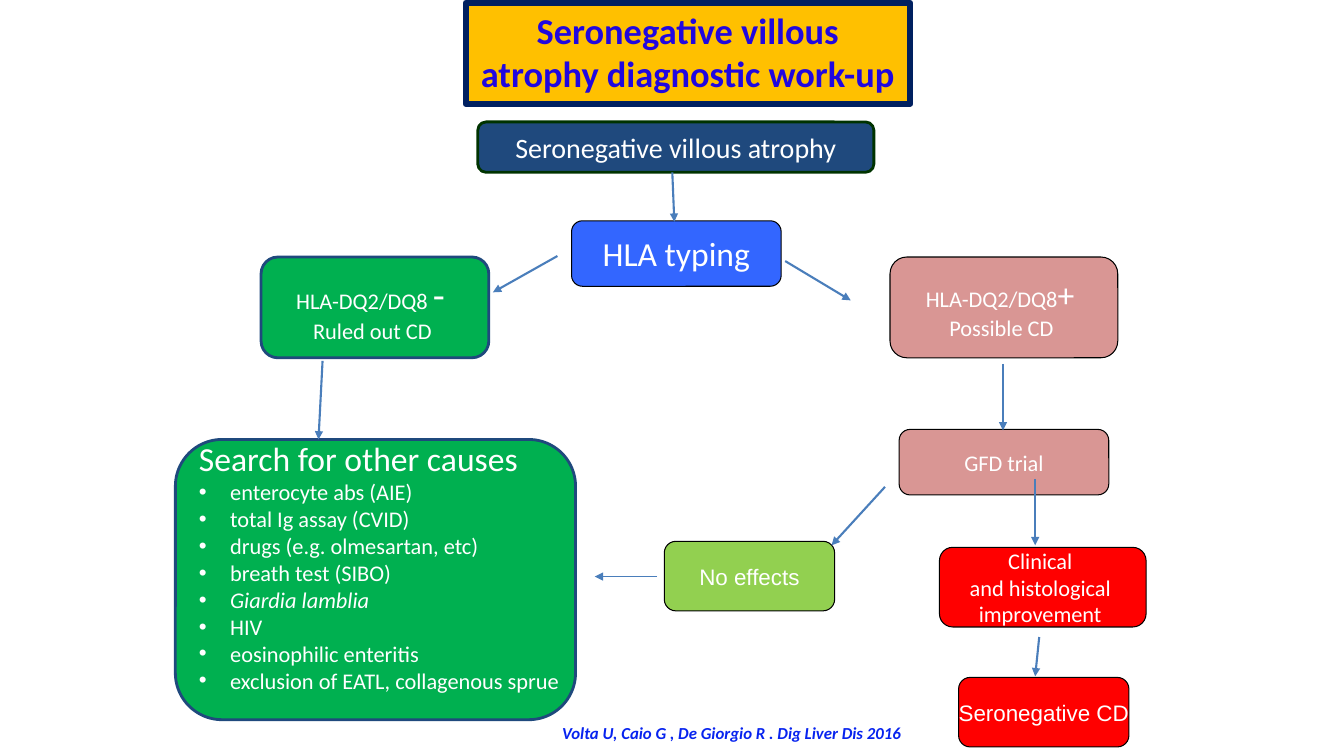
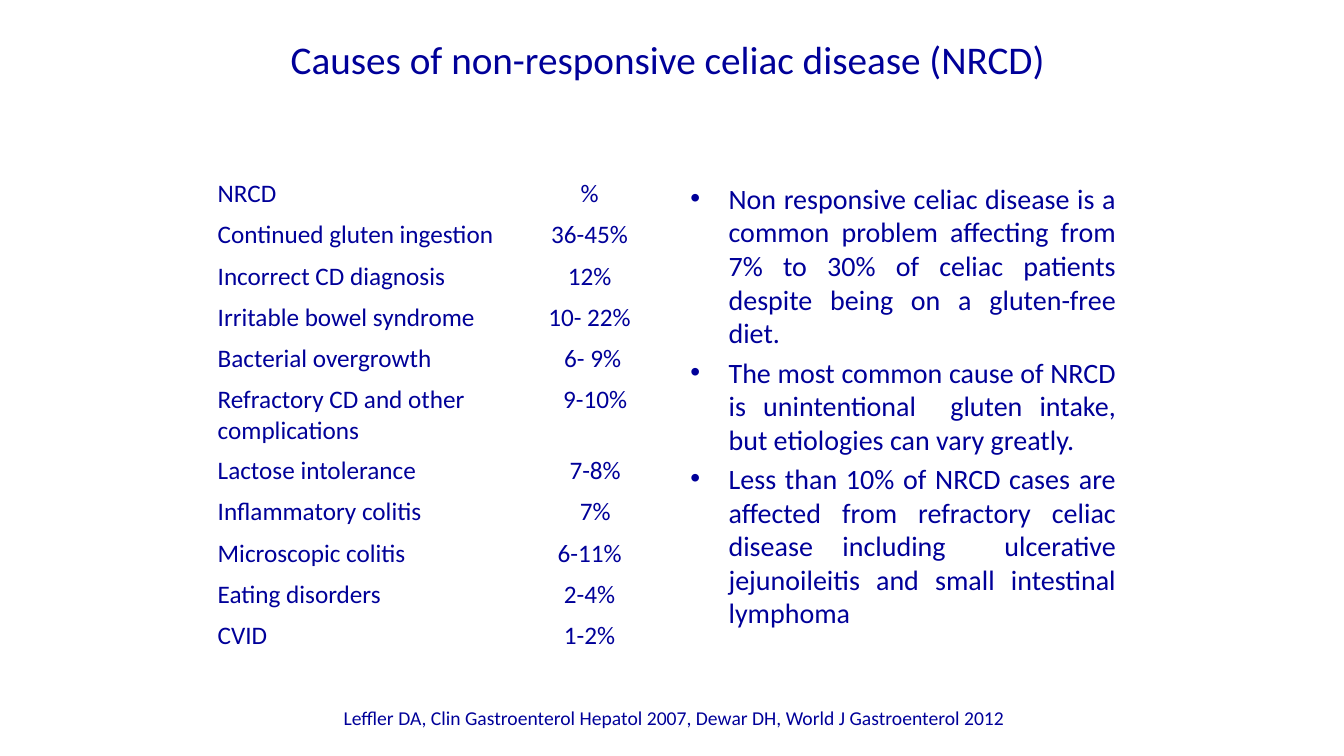
from dataclasses import dataclass
from lxml.etree import SubElement
from pptx import Presentation
from pptx.dml.color import RGBColor
from pptx.enum.shapes import MSO_CONNECTOR, MSO_SHAPE
from pptx.enum.text import MSO_ANCHOR, PP_ALIGN
from pptx.oxml.ns import qn
from pptx.util import Inches, Pt


@dataclass(frozen=True)
class Theme:
    font: str = "Calibri"
    plain_font: str = "Arial"
    white: str = "FFFFFF"
    black: str = "000000"
    ink: str = "000099"
    title_ink: str = "2107DF"
    citation_ink: str = "0723EF"
    gold: str = "FFC000"
    navy: str = "002060"
    blue: str = "1F497D"
    bright_blue: str = "3366FF"
    dark_green: str = "003300"
    green: str = "00B050"
    lime: str = "92D050"
    rose: str = "D99694"
    red: str = "FF0000"
    arrow: str = "4A7EBB"
    title: int = 28
    banner: int = 26
    large: int = 24
    medium: int = 20
    table: int = 18
    body: int = 16
    source: int = 14
    citation: int = 12


THEME = Theme()
COLUMNS, ROWS = 80, 45
CELL = Inches(1) / 6  # the grid is square: 80 columns by 45 rows

# Content: diagnostic work-up. Places are column, row, columns wide, rows high
BANNER = ("Seronegative villous atrophy diagnostic work-up", (27.72, 0.18, 26.46, 6))
WORKUP_CITATION = ("Volta U, Caio G , De Giorgio R . Dig Liver Dis 2016", (31.32, 42.72, 24.48, 1.8))
CAUSES_PLACE = (10.44, 26.16, 23.82, 16.68)
CAUSES = [
    [("Search for other causes", {"size": THEME.large})],
    "enterocyte abs (AIE)",
    "total Ig assay (CVID)",
    "drugs (e.g. olmesartan, etc)",
    "breath test (SIBO)",
    [("Giardia lamblia", {"italic": True})],
    "HIV",
    "eosinophilic enteritis",
    "exclusion of EATL, collagenous sprue",
]
THIN = (THEME.black, 0.75)
THICK = (THEME.blue, 2)
# Each step: paragraphs, place, fill, outline, text format
STEPS = [
    (["Seronegative villous atrophy"], (28.44, 7.26, 23.58, 3),
     THEME.blue, (THEME.dark_green, 2), {"size": THEME.medium}),
    (["HLA typing"], (34.02, 13.14, 12.48, 3.9), THEME.bright_blue, THIN, {"size": THEME.large}),
    ([[("HLA-DQ2/DQ8 ", {}), ("- ", {"size": THEME.title})], "Ruled out CD "],
     (15.54, 15.3, 13.56, 6), THEME.green, THICK, {}),
    ([[("HLA-DQ2/DQ8", {}), ("+ ", {"size": THEME.large})], "Possible CD "],
     (52.98, 15.3, 13.56, 6), THEME.rose, THIN, {}),
    (["GFD trial"], (53.52, 25.56, 12.48, 3.9), THEME.rose, THIN, {}),
    (["Clinical ", "and histological ", "improvement "],
     (55.92, 32.58, 12.3, 4.74), THEME.red, THIN, {}),
    (["No effects"], (39.54, 32.22, 10.14, 4.14), THEME.lime, THIN, {"font": THEME.plain_font}),
    (["Seronegative CD"], (57.06, 40.32, 10.14, 4.14), THEME.red, THIN, {"font": THEME.plain_font}),
]
# Each arrow: start, end, line width
ARROWS = [
    ((40.02, 10.26), (40.14, 13.2), 1.5),
    ((33.18, 15.24), (29.34, 17.4), 1.5),
    ((46.74, 15.54), (50.64, 17.88), 1.5),
    ((19.2, 21.48), (18.96, 26.16), 1.5),
    ((59.7, 21.66), (59.7, 25.62), 1.5),
    ((52.68, 28.98), (49.5, 32.46), 1.5),
    ((61.62, 28.5), (61.62, 32.46), 1.5),
    ((61.86, 37.92), (61.62, 40.26), 1.5),
    ((39.12, 34.32), (35.4, 34.32), 0.75),
]

# Content: causes of non-responsive disease
NRCD_TITLE = ("Causes of non-responsive celiac disease (NRCD) ", (13, 1.8, 54, 7.5))
NRCD_SOURCE = ("Leffler DA, Clin Gastroenterol Hepatol 2007, Dewar DH, World J Gastroenterol 2012",
               (19.86, 41.7, 48.72, 2.04))
TABLE_CORNER = (12.36, 10.32)
TABLE_COLUMNS = (19.02, 7.44)
TABLE_ROW = 2.46
# Each row: cause, share, extra left margin of the share in inches
FREQUENCIES = [
    ("NRCD", "%", 0),
    ("Continued gluten ingestion", "36-45%", 0),
    ("Incorrect CD diagnosis", "12%", 0),
    ("Irritable bowel syndrome", "10- 22%", 0),
    ("Bacterial overgrowth", "6- 9%", 0.06),
    ("Refractory CD and other complications", "9-10%", 0.11),
    ("Lactose intolerance", "7-8%", 0.11),
    ("Inflammatory colitis", "7%", 0.11),
    ("Microscopic colitis", "6-11%", 0),
    ("Eating disorders", "2-4%", 0),
    ("CVID", "1-2%", 0),
]
POINTS_PLACE = (40.5, 10.5, 26.52, 29.7)
POINTS = [
    "Non responsive celiac disease is a common problem affecting from 7% to 30% of celiac "
    "patients despite being on a gluten-free diet.",
    "The most common cause of NRCD is unintentional  gluten intake, but etiologies can vary greatly.",
    "Less than 10% of NRCD cases are affected from refractory celiac disease including  "
    "ulcerative jejunoileitis and small intestinal lymphoma",
]


def grid(*lengths):
    return [round(length * CELL) for length in lengths]


def rgb(colour):
    return RGBColor.from_string(colour)


def add_bullet(paragraph, indent):
    properties = paragraph._p.get_or_add_pPr()
    properties.set("marL", str(Inches(indent)))
    properties.set("indent", str(-Inches(indent)))
    SubElement(properties, qn("a:buFont")).set("typeface", THEME.plain_font)
    SubElement(properties, qn("a:buChar")).set("char", "•")


def write(frame, paragraphs, size=THEME.body, colour=THEME.ink, font=THEME.font, bold=False,
          italic=False, align=PP_ALIGN.LEFT, indent=0, bullets_from=0, gap=0):
    """Fill a text frame; a paragraph is a string or a list of (text, overrides)."""
    for index, content in enumerate(paragraphs):
        paragraph = frame.add_paragraph() if index else frame.paragraphs[0]
        paragraph.alignment = align
        if index and gap:
            paragraph.space_before = Pt(gap)
        if indent and index >= bullets_from:
            add_bullet(paragraph, indent)
        for text, overrides in [(content, {})] if isinstance(content, str) else content:
            run = paragraph.add_run()
            run.text = text
            run.font.name = font
            run.font.size = Pt(overrides.get("size", size))
            run.font.bold = bold
            run.font.italic = overrides.get("italic", italic)
            run.font.color.rgb = rgb(colour)


def add_text(slide, paragraphs, place, **text_format):
    frame = slide.shapes.add_textbox(*grid(*place)).text_frame
    frame.word_wrap = True
    write(frame, paragraphs, **text_format)


def add_box(slide, paragraphs, place, fill, outline, kind=MSO_SHAPE.ROUNDED_RECTANGLE,
            wrap=False, anchor=MSO_ANCHOR.MIDDLE, **text_format):
    shape = slide.shapes.add_shape(kind, *grid(*place))
    shape.shadow.inherit = False
    shape.fill.solid()
    shape.fill.fore_color.rgb = rgb(fill)
    shape.line.color.rgb = rgb(outline[0])
    shape.line.width = Pt(outline[1])
    frame = shape.text_frame
    frame.word_wrap = wrap
    frame.vertical_anchor = anchor
    write(frame, paragraphs, **{"colour": THEME.white, "align": PP_ALIGN.CENTER, **text_format})
    return shape


def add_arrow(slide, start, end, width):
    arrow = slide.shapes.add_connector(MSO_CONNECTOR.STRAIGHT, *grid(*start, *end))
    arrow.line.color.rgb = rgb(THEME.arrow)
    arrow.line.width = Pt(width)
    SubElement(arrow.line._get_or_add_ln(), qn("a:tailEnd")).set("type", "triangle")
    SubElement(arrow._element.spPr, qn("a:effectLst"))


def add_frequency_table(slide):
    size = (sum(TABLE_COLUMNS), TABLE_ROW * len(FREQUENCIES))
    table = slide.shapes.add_table(len(FREQUENCIES), len(TABLE_COLUMNS),
                                   *grid(*TABLE_CORNER, *size)).table
    for column, width in zip(table.columns, grid(*TABLE_COLUMNS)):
        column.width = width
    for index, (cause, share, nudge) in enumerate(FREQUENCIES):
        for column, (text, align) in enumerate([(cause, PP_ALIGN.LEFT), (share, PP_ALIGN.CENTER)]):
            cell = table.cell(index, column)
            cell.fill.solid()
            cell.fill.fore_color.rgb = rgb(THEME.white)
            if column and nudge:
                cell.margin_left = Inches(0.1 + nudge)
            write(cell.text_frame, [text], size=THEME.table, align=align)


def build_workup(slide):
    # Banner and list of other causes
    text, place = BANNER
    add_box(slide, [text], place, THEME.gold, (THEME.navy, 4.5), kind=MSO_SHAPE.RECTANGLE,
            wrap=True, anchor=MSO_ANCHOR.TOP, size=THEME.banner, colour=THEME.title_ink, bold=True)
    causes = add_box(slide, CAUSES, CAUSES_PLACE, THEME.green, THICK,
                     align=PP_ALIGN.LEFT, indent=0.31, bullets_from=1)
    causes.text_frame.margin_bottom = Inches(0.32)
    # Flow chart
    for paragraphs, place, fill, outline, text_format in STEPS:
        add_box(slide, paragraphs, place, fill, outline, **text_format)
    for arrow in ARROWS:
        add_arrow(slide, *arrow)
    # Citation
    text, place = WORKUP_CITATION
    add_text(slide, [text], place, size=THEME.citation, colour=THEME.citation_ink,
             bold=True, italic=True, align=PP_ALIGN.CENTER)


def build_nrcd(slide):
    text, place = NRCD_TITLE
    add_text(slide, [text], place, size=THEME.title, align=PP_ALIGN.CENTER)
    add_frequency_table(slide)
    add_text(slide, POINTS, POINTS_PLACE, size=THEME.medium, align=PP_ALIGN.JUSTIFY,
             indent=0.38, gap=4)
    text, place = NRCD_SOURCE
    add_text(slide, [text], place, size=THEME.source)


def main():
    presentation = Presentation()
    presentation.slide_width, presentation.slide_height = grid(COLUMNS, ROWS)
    blank = presentation.slide_layouts[6]
    for build in (build_workup, build_nrcd):
        build(presentation.slides.add_slide(blank))
    presentation.save("out.pptx")


if __name__ == "__main__":
    main()
